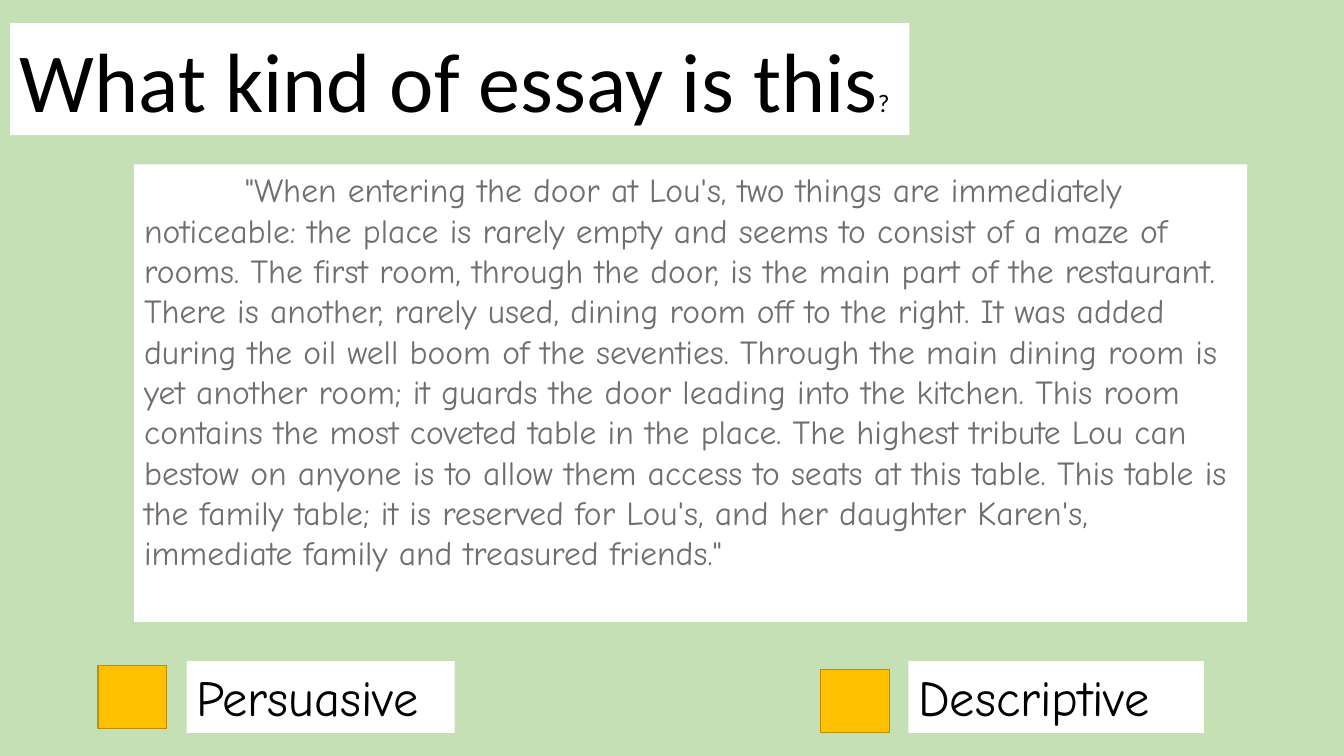
from dataclasses import dataclass

from pptx import Presentation
from pptx.dml.color import RGBColor
from pptx.enum.shapes import MSO_SHAPE
from pptx.enum.text import MSO_AUTO_SIZE
from pptx.util import Inches, Pt

BUTTON = MSO_SHAPE.ACTION_BUTTON_CUSTOM
GROW = MSO_AUTO_SIZE.SHAPE_TO_FIT_TEXT

GREEN = RGBColor(0xC5, 0xE0, 0xB4)
WHITE = RGBColor(0xFF, 0xFF, 0xFF)
BLACK = RGBColor(0x00, 0x00, 0x00)
GRAY = RGBColor(0x6F, 0x6F, 0x6F)
GOLD = RGBColor(0xFF, 0xC0, 0x00)
DARK_GOLD = RGBColor(0xBD, 0x8E, 0x00)

HEADING_FONT = "Calibri"
BODY_FONT = "Comic Neue"
SLIDE_WIDTH = Inches(13.33)
SLIDE_HEIGHT = Inches(7.5)
TAB_WIDTH = Inches(1)

PASSAGE = (
    "\t\"When entering the door at Lou's, two things are immediately noticeable: "
    "the place is rarely empty and seems to consist of a maze of rooms. "
    "The first room, through the door, is the main part of the restaurant. "
    "There is another, rarely used, dining room off to the right. "
    "It was added during the oil well boom of the seventies. "
    "Through the main dining room is yet another room; "
    "it guards the door leading into the kitchen. "
    "This room contains the most coveted table in the place. "
    "The highest tribute Lou can bestow on anyone is to allow them access "
    "to seats at this table. This table is the family table; it is reserved "
    "for Lou's, and her daughter Karen's, immediate family and treasured friends.\""
)


@dataclass(frozen=True)
class Area:
    """Left, top, width and height as percentages of the slide."""

    left: float
    top: float
    width: float
    height: float

    def lengths(self) -> tuple[int, int, int, int]:
        return (
            round(SLIDE_WIDTH * self.left / 100),
            round(SLIDE_HEIGHT * self.top / 100),
            round(SLIDE_WIDTH * self.width / 100),
            round(SLIDE_HEIGHT * self.height / 100),
        )


@dataclass(frozen=True)
class Span:
    text: str
    size: int


@dataclass(frozen=True)
class Panel:
    area: Area
    spans: tuple[Span, ...]
    font: str = BODY_FONT
    color: RGBColor = BLACK
    wrap: bool = False


PANELS = (
    Panel(Area(9.98, 21.73, 82.82, 60.53), (Span(PASSAGE, 24),), color=GRAY, wrap=True),
    Panel(
        Area(0.75, 3.07, 66.92, 14.8),
        (Span("What kind of essay is this", 60), Span("?", 18)),
        font=HEADING_FONT,
    ),
    Panel(Area(13.88, 87.47, 19.95, 9.47), (Span("Persuasive", 36),)),
    Panel(Area(67.59, 87.47, 21.98, 9.47), (Span("Descriptive", 36),)),
)

ANSWER_BUTTONS = (
    Area(61.07, 88.53, 5.1, 8.4),
    Area(7.28, 88, 5.1, 8.4),
)


def draw_panel(page, panel: Panel) -> None:
    box = page.shapes.add_textbox(*panel.area.lengths())
    box.fill.solid()
    box.fill.fore_color.rgb = WHITE
    frame = box.text_frame
    frame.word_wrap = panel.wrap
    frame.auto_size = GROW
    para = frame.paragraphs[0]
    para.text = panel.spans[0].text
    para._p.get_or_add_pPr().set("defTabSz", str(TAB_WIDTH))
    for extra in panel.spans[1:]:
        para.add_run().text = extra.text
    for run, span in zip(para.runs, panel.spans):
        run.font.name = panel.font
        run.font.size = Pt(span.size)
        run.font.color.rgb = panel.color


def draw_button(page, area: Area) -> None:
    button = page.shapes.add_shape(BUTTON, *area.lengths())
    button.shadow.inherit = False
    button.fill.solid()
    button.fill.fore_color.rgb = GOLD
    button.line.color.rgb = DARK_GOLD
    button.line.width = Pt(1)


def main() -> None:
    deck = Presentation()
    deck.slide_width = SLIDE_WIDTH
    deck.slide_height = SLIDE_HEIGHT
    page = deck.slides.add_slide(deck.slide_layouts[6])
    page.background.fill.solid()
    page.background.fill.fore_color.rgb = GREEN
    for panel in PANELS:
        draw_panel(page, panel)
    for area in ANSWER_BUTTONS:
        draw_button(page, area)
    deck.save("out.pptx")


if __name__ == "__main__":
    main()
